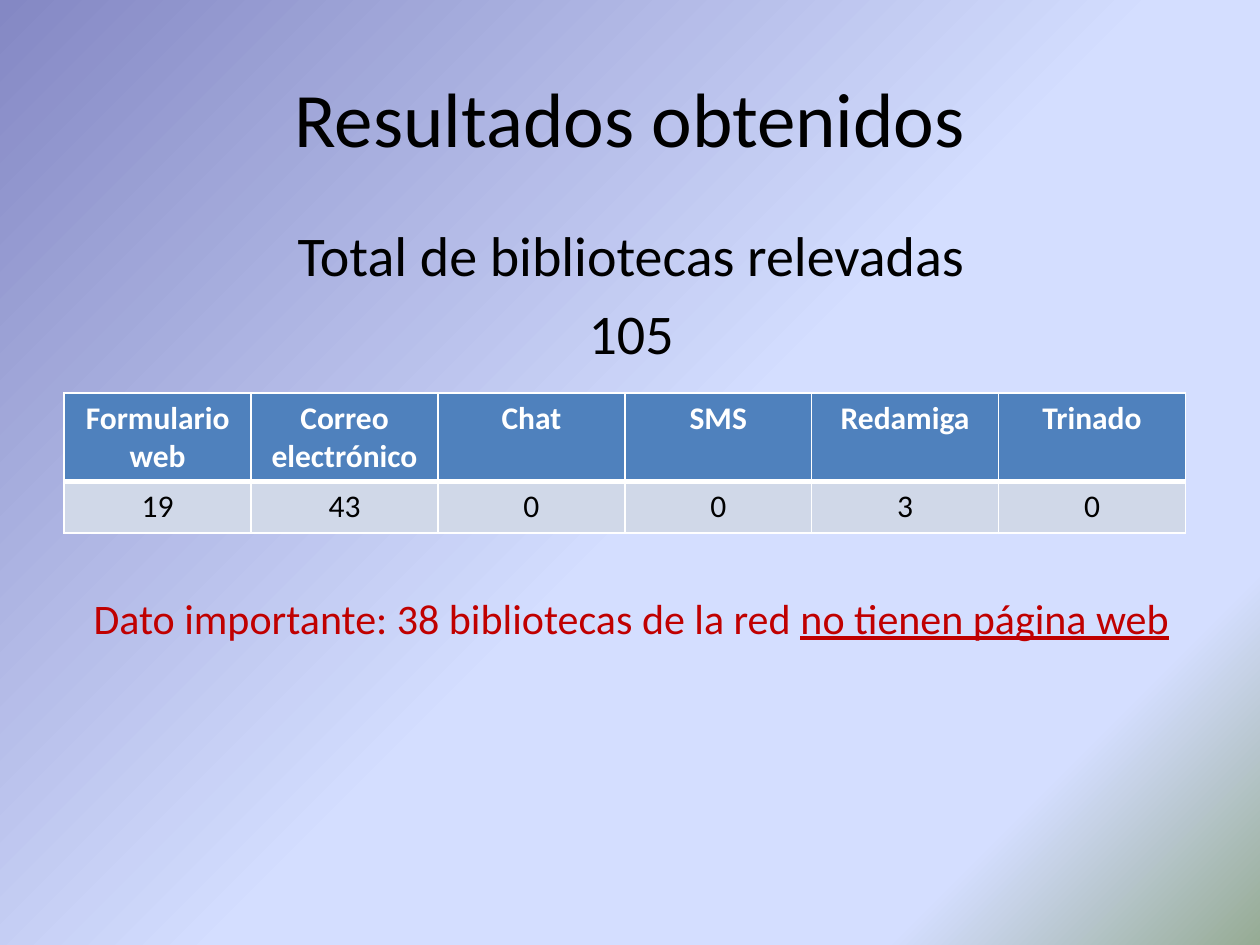
from lxml import etree
from pptx import Presentation
from pptx.dml.color import RGBColor
from pptx.enum import text
from pptx.oxml import ns
from pptx.util import Inches, Pt

BLACK = RGBColor(0x00, 0x00, 0x00)
WHITE = RGBColor(0xFF, 0xFF, 0xFF)
RED = RGBColor(0xC0, 0x00, 0x00)
BLUE = RGBColor(0x4F, 0x81, 0xBD)
PALE = RGBColor(0xD0, 0xD8, 0xE8)
STOPS = [(0, RGBColor(0x84, 0x88, 0xC4)), (53, RGBColor(0xD4, 0xDE, 0xFF)),
         (83, RGBColor(0xD4, 0xDE, 0xFF)), (100, RGBColor(0x96, 0xAB, 0x94))]


def style(par, size, color, bold=False):
    par.alignment = text.PP_ALIGN.CENTER
    for run in par.runs:
        run.font.name = "Calibri"
        run.font.size = Pt(size)
        run.font.bold = bold
        run.font.color.rgb = color


def add_box(left, top, width, height):
    frame = slide.shapes.add_textbox(
        Inches(left), Inches(top), Inches(width), Inches(height)).text_frame
    frame.word_wrap = True
    return frame


prs = Presentation()
prs.slide_width, prs.slide_height = Inches(10), Inches(7.5)
slide = prs.slides.add_slide(prs.slide_layouts[6])

# Diagonal gradient background
fill = slide.background.fill
fill.gradient()
fill.gradient_angle = 315
stops = next(slide.element.iter(ns.qn("a:gsLst")))
for old in list(stops):
    stops.remove(old)
for pos, color in STOPS:
    stop = etree.SubElement(stops, ns.qn("a:gs"), pos=str(pos * 1000))
    etree.SubElement(stop, ns.qn("a:srgbClr"), val=str(color))

# Title
title = add_box(0.5, 0.3, 9, 1.25)
title.vertical_anchor = text.MSO_ANCHOR.MIDDLE
title.text = "Resultados obtenidos"
style(title.paragraphs[0], 44, BLACK)

# Total
total = add_box(0.51, 1.7, 9, 1.3)
total.text = "Total de bibliotecas relevadas\n105"
for par in total.paragraphs:
    style(par, 32, BLACK)
total.paragraphs[1].space_before = Pt(6.4)

# Table of contact channels
rows = [["Formulario web", "Correo electrónico", "Chat", "SMS", "Redamiga", "Trinado"],
        ["19", "43", "0", "0", "3", "0"]]
table = slide.shapes.add_table(
    2, 6, Inches(0.51), Inches(3.12), Inches(8.9), Inches(1.11)).table
table.rows[0].height, table.rows[1].height = Inches(0.7), Inches(0.41)
for r, row in enumerate(rows):
    head = r == 0
    for c, word in enumerate(row):
        cell = table.cell(r, c)
        cell.text = word
        style(cell.text_frame.paragraphs[0], 18, WHITE if head else BLACK, head)
        # White borders, thick between the two rows
        props = cell._tc.get_or_add_tcPr()
        thick = "B" if head else "T"
        for side in "LRTB":
            width = Pt(3 if side == thick else 1)
            line = etree.SubElement(props, ns.qn(f"a:ln{side}"), w=str(width))
            solid = etree.SubElement(line, ns.qn("a:solidFill"))
            etree.SubElement(solid, ns.qn("a:srgbClr"), val=str(WHITE))
        cell.fill.solid()
        cell.fill.fore_color.rgb = BLUE if head else PALE

# Key fact
fact = add_box(0.51, 4.65, 9, 0.51).paragraphs[0]
fact.text = "Dato importante: 38 bibliotecas de la red "
fact.add_run().text = "no tienen página web"
style(fact, 24, RED)
fact.runs[1].font.underline = True

prs.save("out.pptx")
